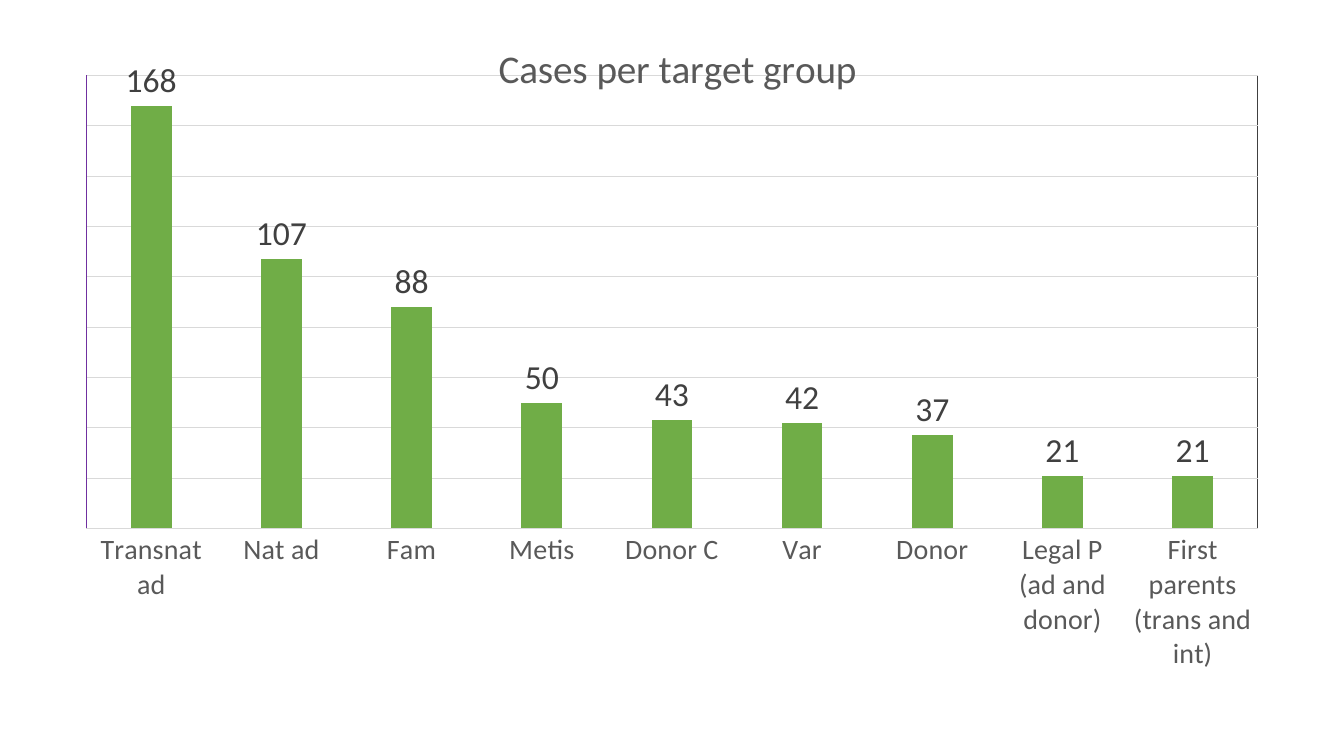
from lxml import etree
from pptx import Presentation
from pptx.chart.data import CategoryChartData
from pptx.dml.color import RGBColor
from pptx.enum.chart import XL_CHART_TYPE, XL_LABEL_POSITION, XL_TICK_LABEL_POSITION, XL_TICK_MARK
from pptx.oxml import parse_xml
from pptx.oxml.ns import nsdecls, qn
from pptx.util import Inches, Pt

COLUMNS = XL_CHART_TYPE.COLUMN_CLUSTERED
OUTSIDE_END = XL_LABEL_POSITION.OUTSIDE_END
NO_LABELS = XL_TICK_LABEL_POSITION.NONE
NO_TICKS = XL_TICK_MARK.NONE

CASES = {
    "Transnat ad": 168,
    "Nat ad": 107,
    "Fam": 88,
    "Metis": 50,
    "Donor C": 43,
    "Var": 42,
    "Donor": 37,
    "Legal P (ad and donor)": 21,
    "First parents (trans and int)": 21,
}


def rgb(value):
    return RGBColor.from_string(value)


class SlideBuilder:
    face = "Calibri"
    green = "70AD47"
    grey = "595959"
    dark = "404040"
    pale = "D9D9D9"
    purple = "7030A0"

    def __init__(self, slide):
        self.slide = slide

    def font(self, target, size, color):
        target.name = self.face
        target.size = Pt(size)
        target.bold = False
        target.color.rgb = rgb(color)

    def line(self, target, color):
        target.line.color.rgb = rgb(color)
        target.line.width = Pt(0.75)

    def place(self, element, index, inner=False, **fractions):
        for old in element.findall(qn("c:layout")):
            element.remove(old)
        layout = etree.Element(qn("c:layout"))
        manual = etree.SubElement(layout, qn("c:manualLayout"))
        settings = {"layoutTarget": "inner"} if inner else {}
        settings.update(xMode="edge", yMode="edge")
        settings.update(fractions)
        for tag, value in settings.items():
            etree.SubElement(manual, qn("c:" + tag)).set("val", str(value))
        element.insert(index, layout)

    def column_chart(self, title, values, left, top, width, height):
        data = CategoryChartData()
        data.categories = list(values)
        data.add_series("Series 1", list(values.values()))
        chart = self.slide.shapes.add_chart(
            COLUMNS, Inches(left), Inches(top), Inches(width), Inches(height), data
        ).chart
        self.font(chart.font, 10, "000000")
        chart.has_legend = False
        self.title(chart, title)
        self.columns(chart.plots[0])
        self.axes(chart)
        self.plot_area(chart)

    def title(self, chart, text):
        chart.has_title = True
        chart.chart_title.include_in_layout = True
        heading = chart.chart_title.text_frame.paragraphs[0]
        heading.text = text
        self.font(heading.font, 28, self.grey)
        self.place(chart.chart_title._element, 1, x=0.35, y=0.03)

    def columns(self, plot):
        plot.gap_width = 219
        plot.overlap = -27
        plot.vary_by_categories = False
        fill = plot.series[0].format.fill
        fill.solid()
        fill.fore_color.rgb = rgb(self.green)
        labels = plot.series[0].data_labels
        labels.show_value = True
        labels.position = OUTSIDE_END
        self.font(labels.font, 24, self.dark)

    def axes(self, chart):
        groups, cases = chart.category_axis, chart.value_axis
        for axis in (groups, cases):
            axis.major_tick_mark = NO_TICKS
            axis.minor_tick_mark = NO_TICKS
        self.font(groups.tick_labels.font, 20, self.grey)
        self.line(groups.format, self.pale)
        cases.tick_label_position = NO_LABELS
        cases.minimum_scale = 0
        cases.maximum_scale = 180
        cases.major_unit = 20
        self.line(cases.format, self.purple)
        self.line(cases.major_gridlines.format, self.pale)

    def plot_area(self, chart):
        area = chart._chartSpace.chart.plotArea
        self.place(area, 0, inner=True, x=0.013, y=0.09, w=0.974, h=0.676)
        area.append(parse_xml(
            f'<c:spPr {nsdecls("c", "a")}><a:noFill/><a:ln w="9525"><a:solidFill>'
            f'<a:srgbClr val="{self.dark}"/></a:solidFill></a:ln></c:spPr>'
        ))


def main():
    deck = Presentation()
    deck.slide_width = Inches(13.33)
    deck.slide_height = Inches(7.5)
    builder = SlideBuilder(deck.slides.add_slide(deck.slide_layouts[6]))
    builder.column_chart("Cases per target group", CASES, 0.7, 0.15, 11.93, 6.65)
    deck.save("out.pptx")


if __name__ == "__main__":
    main()
